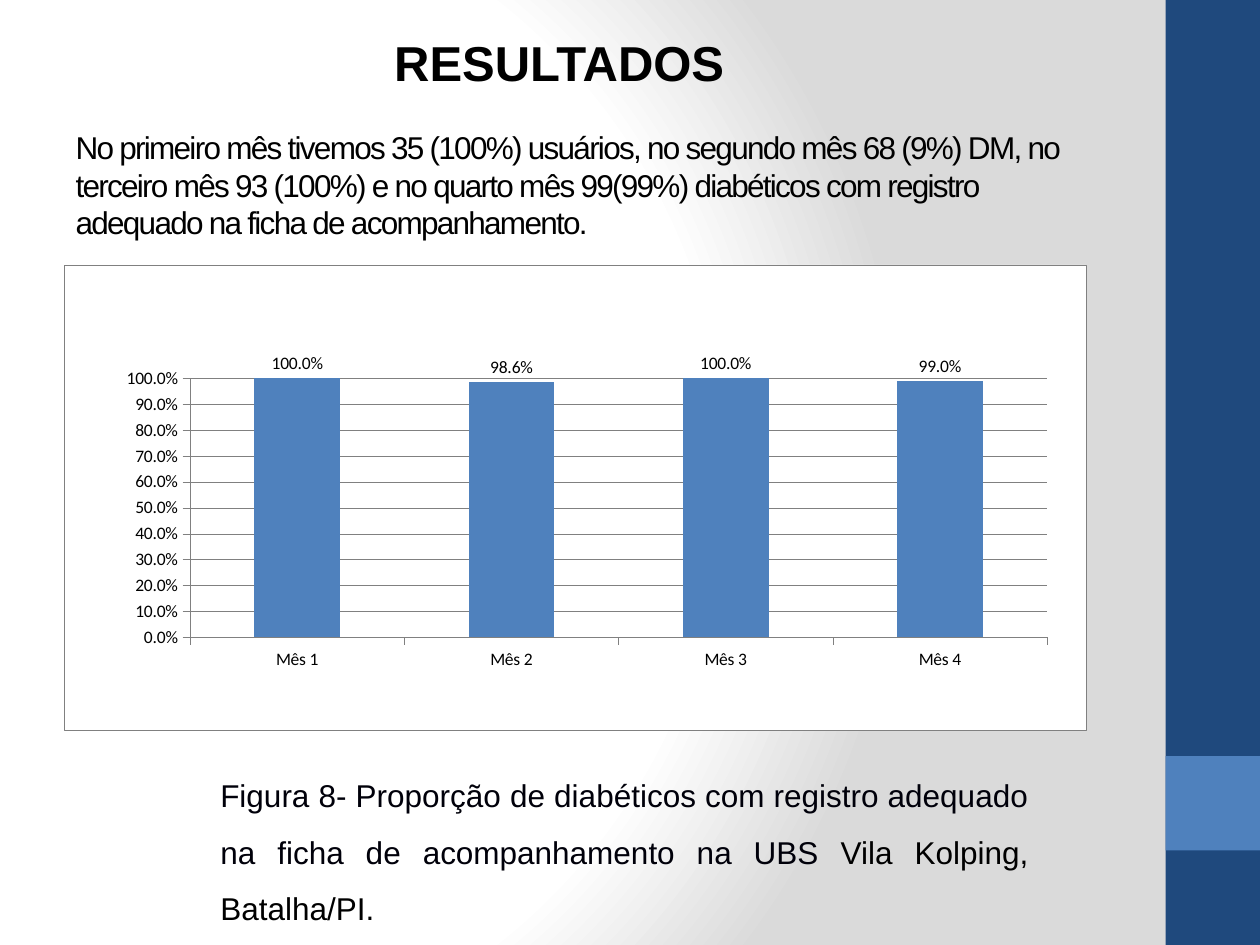
from dataclasses import dataclass

from lxml.etree import SubElement
from pptx import Presentation
from pptx.chart.data import CategoryChartData
from pptx.dml.color import RGBColor
from pptx.enum.chart import XL_CHART_TYPE as ChartType, XL_LABEL_POSITION as LabelPosition
from pptx.enum.chart import XL_TICK_MARK as TickMark
from pptx.enum.shapes import MSO_SHAPE as Shape
from pptx.enum.text import MSO_ANCHOR as Anchor, MSO_AUTO_SIZE as AutoSize, PP_ALIGN as Align
from pptx.oxml import parse_xml
from pptx.oxml.ns import nsdecls, qn
from pptx.util import Inches, Pt


@dataclass(frozen=True)
class Theme:
    navy: RGBColor = RGBColor.from_string("1F497D")
    blue: RGBColor = RGBColor.from_string("4F81BD")
    grey: RGBColor = RGBColor.from_string("808080")
    white: RGBColor = RGBColor.from_string("FFFFFF")
    shade: RGBColor = RGBColor.from_string("DADADA")
    black: RGBColor = RGBColor.from_string("000000")
    ink: RGBColor = RGBColor.from_string("00000A")
    text_font: str = "Arial"
    chart_font: str = "Calibri"
    heading_size: Pt = Pt(28)
    body_size: Pt = Pt(18)
    chart_size: Pt = Pt(10)
    hairline: Pt = Pt(0.25)


theme = Theme()


def style_font(font, name, size, color, bold=False):
    font.name = name
    font.size = size
    font.color.rgb = color
    font.bold = bold


def style_line(line):
    line.color.rgb = theme.grey
    line.width = theme.hairline


presentation = Presentation()
presentation.slide_width = Inches(10)
presentation.slide_height = Inches(7.5)
slide = presentation.slides.add_slide(presentation.slide_layouts[5])

slide.background.fill.solid()
background = slide.background.fill._xPr
background.remove(background.find(qn("a:solidFill")))
stops = "".join(
    f'<a:gs pos="{position * 1000}"><a:srgbClr val="{color}"/></a:gs>'
    for position, color in ((0, theme.white), (75, theme.white), (100, theme.shade))
)
background.insert(0, parse_xml(
    f'<a:gradFill rotWithShape="1" {nsdecls("a")}><a:gsLst>{stops}</a:gsLst>'
    '<a:path path="circle"><a:fillToRect l="20000" t="50000" r="100000" b="50000"/></a:path>'
    "</a:gradFill>"
))

for top, height, color in ((0, 7.5, theme.navy), (6, 0.75, theme.blue)):
    band = slide.shapes.add_shape(Shape.RECTANGLE, Inches(9.25), Inches(top), Inches(0.75), Inches(height))
    band.shadow.inherit = False
    band.fill.solid()
    band.fill.fore_color.rgb = color
    band.line.fill.background()

title = slide.shapes.title
title.left, title.top = Inches(0.5), Inches(0.84)
title.width, title.height = Inches(8.33), Inches(1.25)
title.text_frame.text = (
    "No primeiro mês tivemos 35 (100%) usuários, no segundo mês 68 (9%) DM, "
    "no terceiro mês 93 (100%) e no quarto mês 99(99%) diabéticos com registro "
    "adequado na ficha de acompanhamento."
)
title.text_frame.vertical_anchor = Anchor.MIDDLE
title.text_frame.auto_size = AutoSize.NONE
paragraph = title.text_frame.paragraphs[0]
paragraph.alignment = Align.LEFT
style_font(paragraph.runs[0].font, theme.text_font, theme.body_size, theme.black)
paragraph.runs[0].font._element.set("spc", "-100")

caption = slide.shapes.add_textbox(Inches(0.67), Inches(5.96), Inches(8.19), Inches(1.41))
caption.text_frame.word_wrap = True
caption.text_frame.auto_size = AutoSize.SHAPE_TO_FIT_TEXT
paragraph = caption.text_frame.paragraphs[0]
paragraph.alignment = Align.JUSTIFY
paragraph.line_spacing = 1.5
properties = paragraph._p.get_or_add_pPr()
properties.set("marL", str(Inches(0.98)))
properties.set("marR", str(Inches(0.6)))
properties.set("indent", "0")
for text, color in (
    ("Figura 8- Proporção de diabéticos com registro adequado na ficha de acompanhamento na UBS", theme.ink),
    (" Vila Kolping, Batalha/PI.", theme.black),
):
    run = paragraph.add_run()
    run.text = text
    style_font(run.font, theme.text_font, theme.body_size, color)

chart_data = CategoryChartData(number_format="0.0%")
chart_data.categories = [f"Mês {month}" for month in range(1, 5)]
chart_data.add_series("Series 1", (1, 0.986, 1, 0.99))
chart = slide.shapes.add_chart(
    ChartType.COLUMN_CLUSTERED, Inches(0.51), Inches(2.1), Inches(8.11), Inches(3.7), chart_data
).chart
chart.has_legend = False
chart.has_title = False
style_font(chart.font, theme.chart_font, theme.chart_size, theme.black)

for axis in (chart.category_axis, chart.value_axis):
    axis.major_tick_mark = TickMark.OUTSIDE
    axis.minor_tick_mark = TickMark.NONE
    style_line(axis.format.line)
    style_font(axis.tick_labels.font, theme.chart_font, theme.chart_size, theme.black)

value_axis = chart.value_axis
value_axis.minimum_scale, value_axis.maximum_scale, value_axis.major_unit = 0, 1, 0.1
value_axis.tick_labels.number_format = "0.0%"
value_axis.tick_labels.number_format_is_linked = False
value_axis.has_major_gridlines = True
style_line(value_axis.major_gridlines.format.line)

plot = chart.plots[0]
plot.vary_by_categories = False
plot.gap_width = 150
series = plot.series[0]
series.format.fill.solid()
series.format.fill.fore_color.rgb = theme.blue
labels = series.data_labels
labels.show_value = True
labels.number_format = "0.0%"
labels.number_format_is_linked = False
labels.position = LabelPosition.OUTSIDE_END
style_font(labels.font, theme.chart_font, theme.chart_size, theme.black)

chart_space = chart._chartSpace
plot_area = chart_space.chart.plotArea
for layout in plot_area.findall(qn("c:layout")):
    plot_area.remove(layout)
layout = parse_xml(f'<c:layout {nsdecls("c")}><c:manualLayout/></c:layout>')
for tag, value in (
    ("layoutTarget", "inner"), ("xMode", "edge"), ("yMode", "edge"),
    ("x", "0.123"), ("y", "0.244"), ("w", "0.839"), ("h", "0.556"),
):
    SubElement(layout[0], qn(f"c:{tag}")).set("val", value)
plot_area.insert(0, layout)

white_fill = f'<a:solidFill><a:srgbClr val="{theme.white}"/></a:solidFill>'
border = (
    f'<a:ln w="{theme.hairline}"><a:solidFill><a:srgbClr val="{theme.grey}"/></a:solidFill></a:ln>'
)
plot_area.append(parse_xml(f'<c:spPr {nsdecls("c", "a")}>{white_fill}</c:spPr>'))
chart_space.chart.addnext(parse_xml(f'<c:spPr {nsdecls("c", "a")}>{white_fill}{border}</c:spPr>'))

heading = slide.shapes.add_textbox(Inches(3.03), Inches(0.21), Inches(2.99), Inches(0.57))
heading.text_frame.word_wrap = True
heading.text_frame.auto_size = AutoSize.SHAPE_TO_FIT_TEXT
heading.text_frame.text = "RESULTADOS"
run = heading.text_frame.paragraphs[0].runs[0]
style_font(run.font, theme.text_font, theme.heading_size, theme.black, bold=True)

presentation.save("out.pptx")
